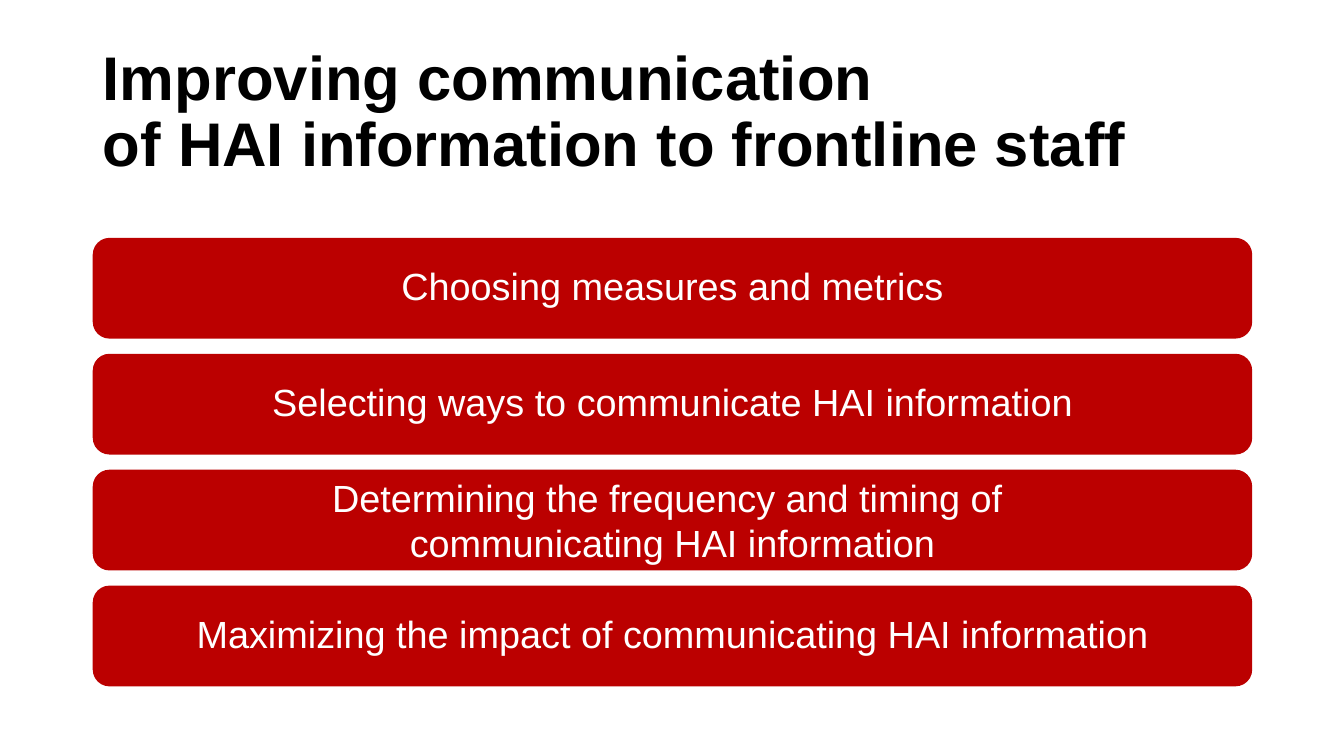
from pptx import Presentation
from pptx.dml.color import RGBColor
from pptx.enum.shapes import MSO_SHAPE
from pptx.enum.text import MSO_ANCHOR, MSO_AUTO_SIZE, PP_ALIGN
from pptx.util import Inches, Pt

BLACK = RGBColor(0x00, 0x00, 0x00)
WHITE = RGBColor(0xFF, 0xFF, 0xFF)
RED = RGBColor(0xBB, 0x00, 0x00)
ROUND = MSO_SHAPE.ROUNDED_RECTANGLE
MIDDLE = MSO_ANCHOR.MIDDLE
NO_FIT = MSO_AUTO_SIZE.NONE
LEFT, CENTER = PP_ALIGN.LEFT, PP_ALIGN.CENTER

TITLE_FONT = {"name": "Arial", "size": Pt(44), "bold": True}
BAR_FONT = {"name": "Arial", "size": Pt(27), "bold": False}
FRAME = {"word_wrap": True, "auto_size": NO_FIT, "vertical_anchor": MIDDLE}

# Shared left edge and width, then the rhythm of the bars
EDGE, WIDTH = 0.92, 11.5
TOP, HEIGHT, STEP = 2.36, 1, 1.15

# Text and line spacing of each bar
BARS = [
    ("Choosing measures and metrics", 0.9),
    ("Selecting ways to communicate HAI information", 0.9),
    ("Determining the frequency and timing of \n"
     "communicating HAI information", 1.0),
    ("Maximizing the impact of communicating HAI information", 0.9),
]


def apply(target, values):
    for name, value in values.items():
        setattr(target, name, value)


def write(shape, text, font, color, align, spacing):
    frame = shape.text_frame
    frame.text = text
    apply(frame, FRAME)
    for para in frame.paragraphs:
        apply(para, {"alignment": align, "line_spacing": spacing,
                     "space_before": Pt(0)})
        for run in para.runs:
            apply(run.font, font)
            run.font.color.rgb = color


def add_title(slide, text):
    title = slide.shapes.title
    apply(title, {"left": Inches(EDGE), "top": Inches(0.4),
                  "width": Inches(WIDTH), "height": Inches(1.45)})
    write(title, text, TITLE_FONT, BLACK, LEFT, 0.9)


def add_bar(slide, top, text, spacing):
    bar = slide.shapes.add_shape(
        ROUND, Inches(EDGE), Inches(top), Inches(WIDTH), Inches(HEIGHT))
    bar.shadow.inherit = False
    bar.fill.solid()
    bar.fill.fore_color.rgb = RED
    bar.line.fill.background()
    write(bar, text, BAR_FONT, WHITE, CENTER, spacing)


def main():
    deck = Presentation()
    deck.slide_width = Inches(13.33)
    deck.slide_height = Inches(7.5)
    slide = deck.slides.add_slide(deck.slide_layouts[5])

    # Title, with a line break inside one paragraph
    add_title(slide, "Improving communication \v"
                     "of HAI information to frontline staff")

    # Evenly stacked bars
    for row, (text, spacing) in enumerate(BARS):
        add_bar(slide, TOP + row * STEP, text, spacing)

    deck.save("out.pptx")


if __name__ == "__main__":
    main()
